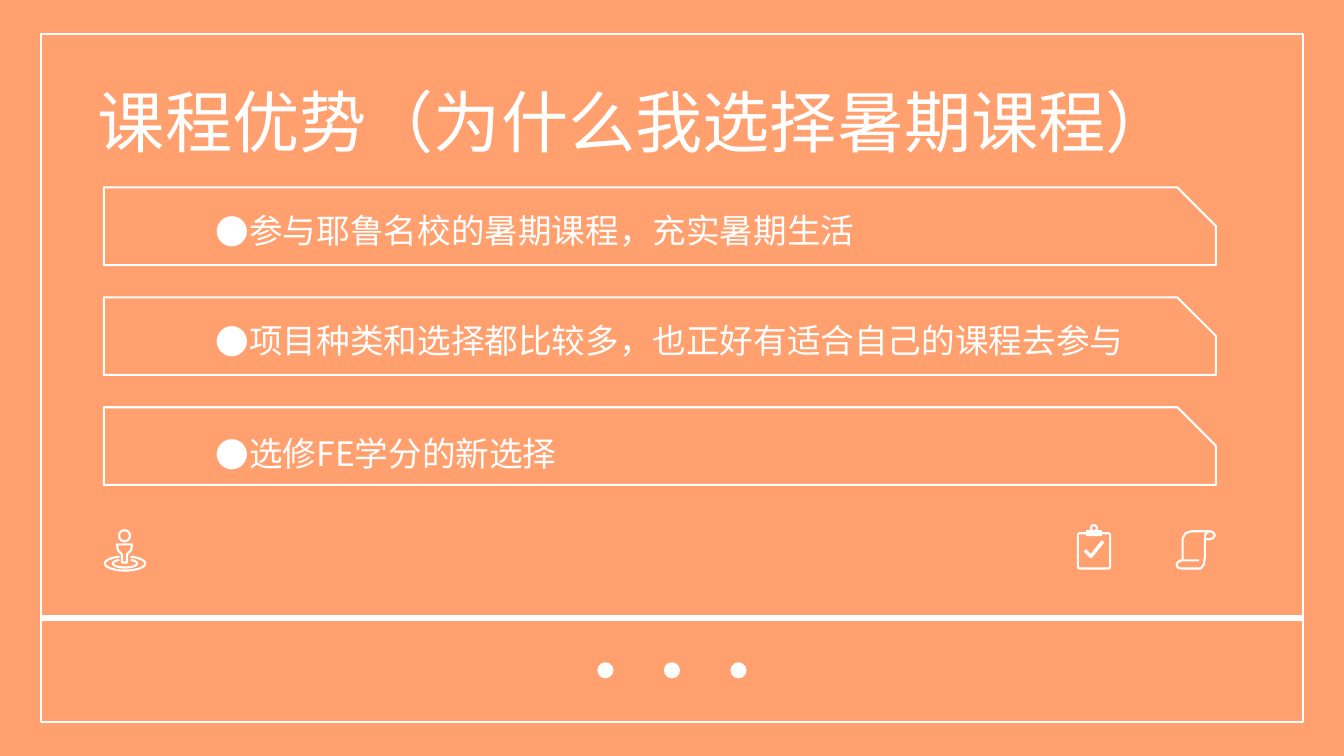
import math

from lxml import etree
from pptx import Presentation
from pptx.dml.color import RGBColor
from pptx.enum.shapes import MSO_CONNECTOR, MSO_SHAPE
from pptx.enum.text import MSO_ANCHOR, MSO_AUTO_SIZE, PP_ALIGN
from pptx.oxml.ns import qn
from pptx.util import Inches, Pt

ORANGE = RGBColor(0xFF, 0xA0, 0x6E)
WHITE = RGBColor(0xFF, 0xFF, 0xFF)
FONT = "Noto Sans CJK SC"
RECT, ROUNDED = MSO_SHAPE.RECTANGLE, MSO_SHAPE.ROUNDED_RECTANGLE
SNIPPED, OVAL = MSO_SHAPE.SNIP_1_RECTANGLE, MSO_SHAPE.OVAL
STRAIGHT = MSO_CONNECTOR.STRAIGHT
TOP, MIDDLE = MSO_ANCHOR.TOP, MSO_ANCHOR.MIDDLE
LEFT, JUSTIFY = PP_ALIGN.LEFT, PP_ALIGN.JUSTIFY
NO_AUTOFIT = MSO_AUTO_SIZE.NONE

TITLE = "课程优势（为什么我选择暑期课程）"
ADVANTAGES = [
    ("参与耶鲁名校的暑期课程，充实暑期生活", -0.03, 9.49),
    ("项目种类和选择都比较多，也正好有适合自己的课程去参与", -0.03, 10.42),
    ("选修FE学分的新选择", 0, 9.49),
]


def style_outline(shape, weight=1.5):
    shape.shadow.inherit = False
    shape.fill.background()
    shape.line.color.rgb = WHITE
    shape.line.width = Pt(weight)


def add_outline(shapes, preset, left, top, width, height):
    shape = shapes.add_shape(preset, Inches(left), Inches(top), Inches(width), Inches(height))
    style_outline(shape)
    return shape


def add_solid(shapes, preset, left, top, width, height):
    shape = add_outline(shapes, preset, left, top, width, height)
    shape.fill.solid()
    shape.fill.fore_color.rgb = WHITE
    shape.line.fill.background()


def add_stroke(shapes, left, top, points, weight=1.5, close=False):
    vertices = [(Inches(left + x), Inches(top + y)) for x, y in points]
    builder = shapes.build_freeform(*vertices[0], scale=1.0)
    builder.add_line_segments(vertices[1:], close=close)
    style_outline(builder.convert_to_shape(), weight)


def fill_placeholder(placeholder, text, box, size, anchor, align):
    placeholder.left, placeholder.top, placeholder.width, placeholder.height = map(Inches, box)
    frame = placeholder.text_frame
    frame.text = text
    frame.word_wrap = True
    frame.auto_size = NO_AUTOFIT
    frame.vertical_anchor = anchor
    paragraph = frame.paragraphs[0]
    paragraph.alignment = align
    paragraph.space_before = Pt(0)
    font = paragraph.runs[0].font
    font.size, font.name, font.bold = Pt(size), FONT, False
    font.color.rgb = WHITE
    east_asian = etree.SubElement(paragraph.runs[0].font._element, qn("a:ea"))
    east_asian.set("typeface", FONT)
    return paragraph


def add_frame(slide, left, top, width, height):
    add_outline(slide.shapes, RECT, left, top, width, height)
    divider_y = Inches(top + 5.79)
    divider = slide.shapes.add_connector(
        STRAIGHT, Inches(left), divider_y, Inches(left + width), divider_y)
    divider.line.color.rgb = WHITE
    divider.line.width = Pt(4.5)
    etree.SubElement(divider._element.spPr, qn("a:effectLst"))
    dots = slide.shapes.add_group_shape()
    dot, pitch = 0.16, 0.66
    for step in (-1, 0, 1):
        add_solid(dots.shapes, OVAL, left + (width - dot) / 2 + step * pitch,
                  top + 6.23, dot, dot)


def add_advantage(slide, placeholder, text, left, top, text_shift, text_width):
    banner = add_outline(slide.shapes, SNIPPED, left, top, 11.03, 0.77)
    banner.adjustments[0] = 0.497
    slide.shapes._spTree.append(placeholder._element)
    paragraph = fill_placeholder(
        placeholder, text, (left + 1.01, top + text_shift, text_width, 0.64),
        24, TOP, JUSTIFY)
    paragraph.line_spacing = 1.5
    properties = paragraph._p.get_or_add_pPr()
    properties.set("marL", str(Inches(0.31)))
    properties.set("indent", str(-Inches(0.31)))
    etree.SubElement(properties, qn("a:buFont")).set("typeface", FONT)
    etree.SubElement(properties, qn("a:buChar")).set("char", "●")


def add_person_icon(slide, left, top):
    shapes = slide.shapes.add_group_shape().shapes
    add_outline(shapes, OVAL, left + 0.15, top + 0.01, 0.11, 0.11)
    torso = [(0.13, 0.15), (0.28, 0.15), (0.27, 0.21), (0.23, 0.25), (0.23, 0.33),
             (0.18, 0.33), (0.18, 0.25), (0.14, 0.21)]
    add_stroke(shapes, left, top, torso, close=True)
    for radius_x, radius_y, gap in ((0.2, 0.07, 16), (0.12, 0.04, 28)):
        angles = [math.radians(a) for a in range(gap - 90, 271 - gap, 4)]
        ring = [(0.21 + radius_x * math.cos(a), 0.34 + radius_y * math.sin(a)) for a in angles]
        add_stroke(shapes, left, top, ring)


def add_clipboard_icon(slide, left, top):
    shapes = slide.shapes.add_group_shape().shapes
    board = add_outline(shapes, ROUNDED, left + 0.01, top + 0.09, 0.32, 0.35)
    board.adjustments[0] = 0.06
    add_solid(shapes, ROUNDED, left + 0.09, top + 0.06, 0.16, 0.06)
    add_outline(shapes, OVAL, left + 0.14, top + 0.01, 0.06, 0.06)
    add_stroke(shapes, left, top, [(0.08, 0.26), (0.14, 0.32), (0.26, 0.17)], 2.5)


def add_scroll_icon(slide, left, top):
    shapes = slide.shapes.add_group_shape().shapes
    sheet = [(0.23, 0.3), (0.05, 0.3), (0.02, 0.32), (0.01, 0.34), (0.02, 0.37), (0.05, 0.38),
             (0.25, 0.38), (0.28, 0.34), (0.29, 0.27), (0.29, 0.07), (0.3, 0.03), (0.34, 0.01),
             (0.37, 0.02), (0.39, 0.05), (0.37, 0.08), (0.34, 0.09), (0.29, 0.09)]
    edge = [(0.07, 0.3), (0.07, 0.08), (0.1, 0.03), (0.16, 0.01), (0.34, 0.01)]
    for points in (sheet, edge):
        add_stroke(shapes, left, top, points)


def build_advantages_slide(presentation):
    slide = presentation.slides.add_slide(presentation.slide_layouts[4])
    slide.background.fill.solid()
    slide.background.fill.fore_color.rgb = ORANGE
    title, *bodies, spare = list(slide.placeholders)[:5]
    spare._element.getparent().remove(spare._element)
    add_frame(slide, 0.41, 0.34, 12.51, 6.82)
    fill_placeholder(title, TITLE, (0.87, 0.74, 11.44, 0.91), 48, MIDDLE, LEFT)
    for row, (body, (text, shift, width)) in enumerate(zip(bodies, ADVANTAGES)):
        add_advantage(slide, body, text, 1.03, 1.86 + row * 1.09, shift, width)
    add_scroll_icon(slide, 11.66, 5.26)
    add_person_icon(slide, 1.03, 5.25)
    add_clipboard_icon(slide, 10.68, 5.2)


def main():
    presentation = Presentation()
    presentation.slide_width = Inches(13.33)
    presentation.slide_height = Inches(7.5)
    build_advantages_slide(presentation)
    presentation.save("out.pptx")


if __name__ == "__main__":
    main()
